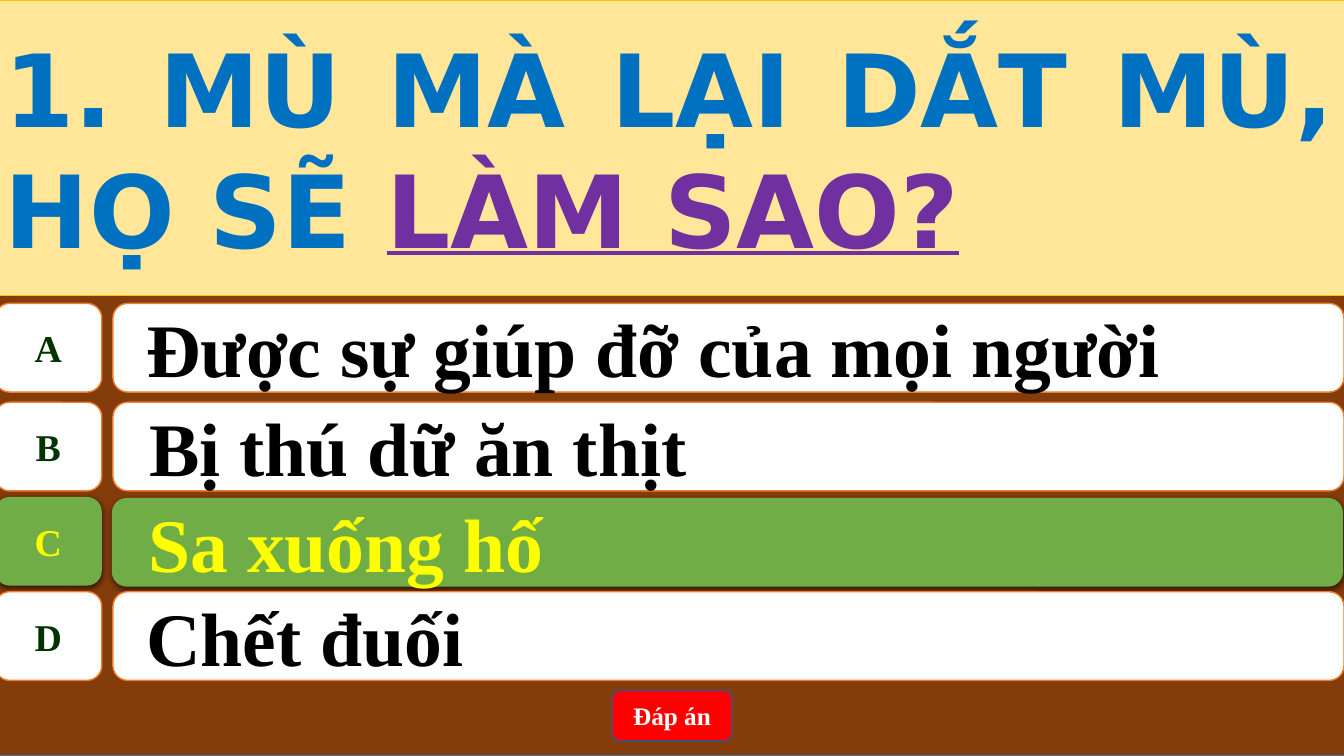
from dataclasses import dataclass

from lxml.etree import SubElement
from pptx import Presentation
from pptx.dml.color import RGBColor
from pptx.enum.shapes import MSO_SHAPE
from pptx.enum.text import MSO_ANCHOR, PP_ALIGN
from pptx.oxml.ns import qn
from pptx.shapes.autoshape import Shape
from pptx.text.text import _Paragraph as Para
from pptx.util import Inches, Pt

BROWN = RGBColor(0x84, 0x3C, 0x0B)
STEEL = RGBColor(0x43, 0x73, 0x9E)
CREAM = RGBColor(0xFF, 0xE6, 0x99)
GOLD = RGBColor(0xFF, 0xC0, 0x00)
BLUE = RGBColor(0x00, 0x70, 0xC0)
PURPLE = RGBColor(0x70, 0x30, 0xA0)
WHITE = RGBColor(0xFF, 0xFF, 0xFF)
BLACK = RGBColor(0x00, 0x00, 0x00)
ORANGE = RGBColor(0xED, 0x7D, 0x31)
FOREST = RGBColor(0x00, 0x33, 0x00)
GREEN = RGBColor(0x70, 0xAD, 0x47)
YELLOW = RGBColor(0xFF, 0xFF, 0x00)
RED = RGBColor(0xFF, 0x00, 0x00)
NAVY = RGBColor(0x32, 0x54, 0x91)

SERIF = "Times New Roman"
SANS = "DejaVu Sans"
EDGE = -0.05
WIDE = 13.39
ROW = 0.88


@dataclass
class Choice:
    key: str
    text: str
    top: float
    inset: bool = False
    right: bool = False


CHOICES = [
    Choice("A", " Được sự giúp đỡ của mọi người", 3.01),
    Choice("B", "Bị thú dữ ăn thịt", 3.99, inset=True),
    Choice("C", "Sa xuống hố", 4.93, inset=True, right=True),
    Choice("D", " Chết đuối", 5.87),
]


def add_box(shapes, kind: MSO_SHAPE, left: float, top: float, width: float,
            height: float, fill: RGBColor, line: RGBColor | None = None,
            weight: float = 1) -> Shape:
    box = shapes.add_shape(kind, Inches(left), Inches(top),
                           Inches(width), Inches(height))
    box.shadow.inherit = False
    box.fill.solid()
    box.fill.fore_color.rgb = fill
    if line is None:
        box.line.fill.background()
    else:
        box.line.color.rgb = line
        box.line.width = Pt(weight)
    return box


def first_para(box: Shape, align: PP_ALIGN, wrap: bool = True) -> Para:
    frame = box.text_frame
    frame.word_wrap = wrap
    frame.vertical_anchor = MSO_ANCHOR.MIDDLE
    para = frame.paragraphs[0]
    para.alignment = align
    return para


def add_run(para: Para, text: str, size: float, color: RGBColor,
            face: str = SERIF, under: bool = False) -> None:
    run = para.add_run()
    run.text = text
    font = run.font
    font.name = face
    font.size = Pt(size)
    font.bold = True
    font.color.rgb = color
    if under:
        font.underline = True


def add_shadow(box: Shape) -> None:
    effects = box.element.spPr.find(qn("a:effectLst"))
    shade = SubElement(effects, qn("a:outerShdw"), blurRad=str(Pt(4.5)),
                       dist=str(Pt(1.5)), dir="5400000", algn="ctr",
                       rotWithShape="0")
    color = SubElement(shade, qn("a:srgbClr"), val=str(BLACK))
    SubElement(color, qn("a:alpha"), val="63000")


def add_choice(shapes, choice: Choice) -> None:
    """Draw the answer bar and its letter tile."""
    fill, line = (GREEN, None) if choice.right else (WHITE, ORANGE)
    ink, mark = (YELLOW, YELLOW) if choice.right else (BLACK, FOREST)
    nudge = 0.01 if choice.right else 0

    bar = add_box(shapes, MSO_SHAPE.ROUNDED_RECTANGLE, 1.12 - nudge,
                  choice.top + nudge, 12.21, ROW, fill, line)
    para = first_para(bar, PP_ALIGN.LEFT)
    if choice.inset:
        para.level = 1
        props = para._p.get_or_add_pPr()
        props.set("marL", str(Inches(0.5)))
        props.set("indent", str(Inches(-0.28)))
    add_run(para, choice.text, 54, ink)

    tile = add_box(shapes, MSO_SHAPE.FLOWCHART_ALTERNATE_PROCESS, EDGE,
                   choice.top, 1.06, ROW, fill, line)
    add_run(first_para(tile, PP_ALIGN.CENTER, wrap=False), choice.key, 27, mark)

    if choice.right:
        add_shadow(bar)
        add_shadow(tile)


def main() -> None:
    deck = Presentation()
    deck.slide_width = Inches(13.33)
    deck.slide_height = Inches(7.5)
    shapes = deck.slides.add_slide(deck.slide_layouts[6]).shapes

    add_box(shapes, MSO_SHAPE.RECTANGLE, EDGE, 0, WIDE, 7.5, BROWN, STEEL)

    title = add_box(shapes, MSO_SHAPE.RECTANGLE, EDGE, 0, WIDE, 2.93,
                    CREAM, GOLD, 0.5)
    para = first_para(title, PP_ALIGN.JUSTIFY)
    add_run(para, "1. MÙ MÀ LẠI DẮT MÙ, HỌ SẼ ", 72, BLUE, SANS)
    add_run(para, "LÀM SAO?", 72, PURPLE, SANS, under=True)

    for choice in CHOICES:
        add_choice(shapes, choice)

    button = add_box(shapes, MSO_SHAPE.ROUNDED_RECTANGLE, 6.07, 6.85,
                     1.19, 0.5, RED, NAVY)
    add_run(first_para(button, PP_ALIGN.CENTER), "Đáp án", 18, WHITE)

    deck.save("out.pptx")


if __name__ == "__main__":
    main()
